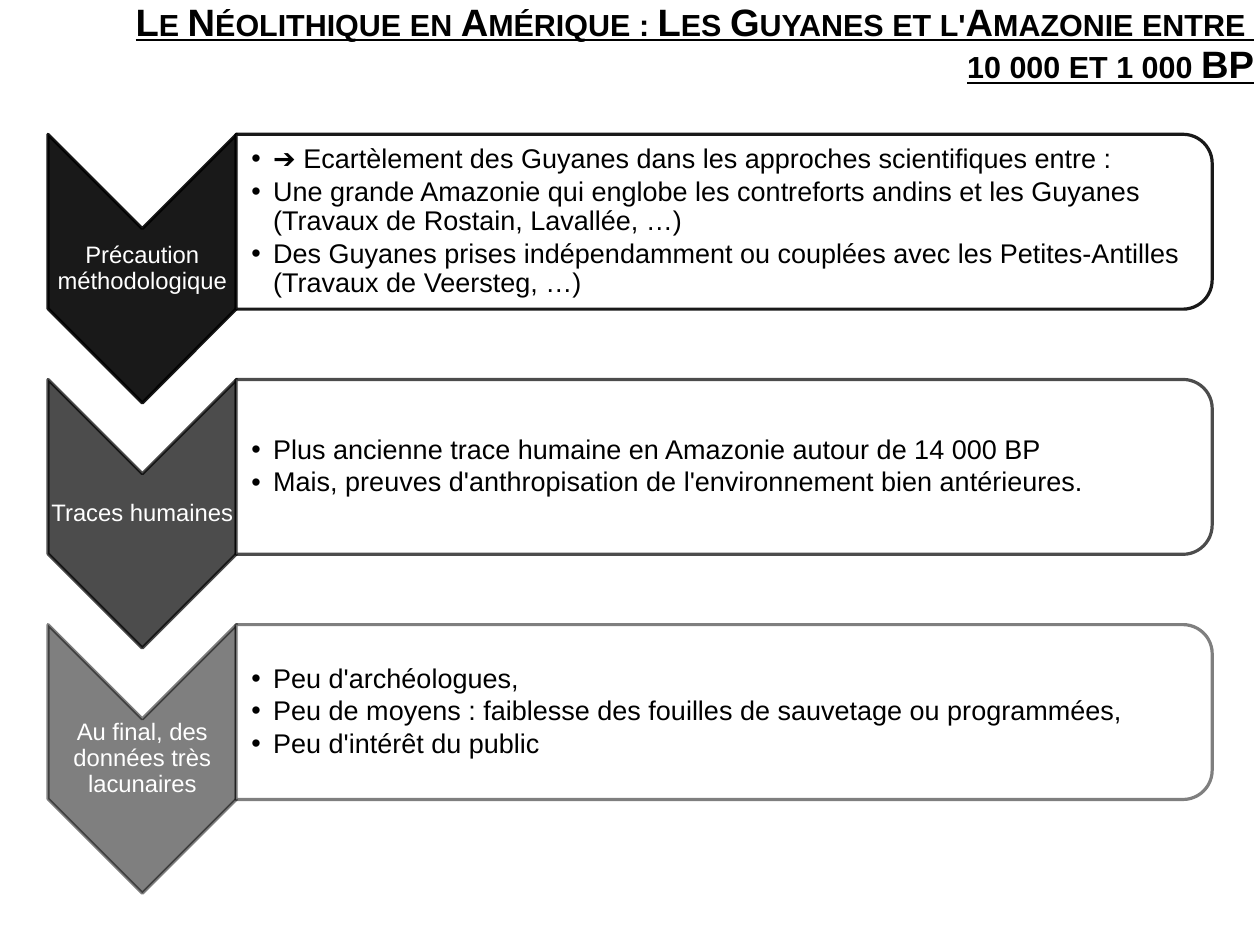
from lxml import etree
from pptx import Presentation
from pptx.dml.color import RGBColor
from pptx.enum.shapes import MSO_SHAPE
from pptx.enum.text import MSO_ANCHOR, PP_ALIGN
from pptx.oxml.ns import qn
from pptx.util import Inches, Pt

CHEVRON = MSO_SHAPE.CHEVRON
ROUNDED_PANEL = MSO_SHAPE.ROUND_2_SAME_RECTANGLE
TOP, MIDDLE = MSO_ANCHOR.TOP, MSO_ANCHOR.MIDDLE
LEFT, CENTER, RIGHT = PP_ALIGN.LEFT, PP_ALIGN.CENTER, PP_ALIGN.RIGHT

COLORS = {"black": "000000", "white": "FFFFFF"}
FONT = "Arial"

TITLE = [
    "Le Néolithique en Amérique : Les Guyanes et l'Amazonie entre ",
    "10 000 et 1 000 BP",
]
STEPS = [
    ("Précaution méthodologique", 90, [
        "➔ Ecartèlement des Guyanes dans les approches scientifiques entre :",
        "Une grande Amazonie qui englobe les contreforts andins et les Guyanes "
        "(Travaux de Rostain, Lavallée, …)",
        "Des Guyanes prises indépendamment ou couplées avec les Petites-Antilles "
        "(Travaux de Veersteg, …)",
    ]),
    ("Traces humaines", 70, [
        "Plus ancienne trace humaine en Amazonie autour de 14 000 BP",
        "Mais, preuves d'anthropisation de l'environnement bien antérieures.",
    ]),
    ("Au final, des données très lacunaires", 50, [
        "Peu d'archéologues,",
        "Peu de moyens : faiblesse des fouilles de sauvetage ou programmées,",
        "Peu d'intérêt du public",
    ]),
]

CM_PER_INCH = 2.54
SLIDE_WIDTH, SLIDE_HEIGHT = 28 / CM_PER_INCH, 21 / CM_PER_INCH
TITLE_BOX = (0.39, 0.02, 10.58, 0.92)
STEP_PITCH = 2.145
CHEVRON_X, CHEVRON_Y = 1.245, 2.35
PANEL_X, PANEL_Y = 6.335, 1.94
DETAIL_X = 6.305


def centered(x, y, width, height):
    return x - width / 2, y - height / 2, width, height


def paint(color_format, color, opacity):
    color_format.rgb = RGBColor.from_string(COLORS[color])
    srgb = color_format._xFill.find(qn("a:srgbClr"))
    etree.SubElement(srgb, qn("a:alpha"), val=str(opacity * 1000))


def add_turned_shape(slide, preset, box, fill, fill_opacity, line_opacity):
    shape = slide.shapes.add_shape(preset, *map(Inches, box))
    shape.rotation = 90
    shape.shadow.inherit = False
    shape.fill.solid()
    paint(shape.fill.fore_color, fill, fill_opacity)
    shape.line.width = Pt(2)
    paint(shape.line.color, "black", line_opacity)


def add_bullet(paragraph):
    properties = paragraph._p.get_or_add_pPr()
    properties.set("marL", str(Inches(0.19)))
    properties.set("indent", str(-Inches(0.19)))
    color = etree.SubElement(properties, qn("a:buClr"))
    etree.SubElement(color, qn("a:srgbClr"), val=COLORS["black"])
    etree.SubElement(properties, qn("a:buFont"), typeface=FONT)
    etree.SubElement(properties, qn("a:buChar"), char="•")


def add_text(slide, box, lines, size, color, align, anchor, insets, spacing,
             gap=0, bullets=False, heading=False):
    frame = slide.shapes.add_textbox(*map(Inches, box)).text_frame
    frame.word_wrap = True
    frame.vertical_anchor = anchor
    (frame.margin_left, frame.margin_top,
     frame.margin_right, frame.margin_bottom) = map(Inches, insets)
    for index, line in enumerate(lines):
        paragraph = frame.add_paragraph() if index else frame.paragraphs[0]
        paragraph.alignment = align
        paragraph.line_spacing = spacing
        paragraph.space_after = Pt(gap)
        if bullets:
            add_bullet(paragraph)
        run = paragraph.add_run()
        run.text = line
        run.font.name = FONT
        run.font.size = Pt(size)
        run.font.color.rgb = RGBColor.from_string(COLORS[color])
        if heading:
            run.font.bold = True
            run.font.underline = True
            run.font._element.set("cap", "small")


def main():
    deck = Presentation()
    deck.slide_width = Inches(SLIDE_WIDTH)
    deck.slide_height = Inches(SLIDE_HEIGHT)
    slide = deck.slides.add_slide(deck.slide_layouts[6])

    add_text(slide, TITLE_BOX, TITLE, 24, "black", RIGHT, TOP,
             (0, 0, 0, 0), 0.93, heading=True)

    for index, (label, opacity, details) in enumerate(STEPS):
        offset = index * STEP_PITCH
        chevron_y, panel_y = CHEVRON_Y + offset, PANEL_Y + offset
        add_turned_shape(slide, CHEVRON,
                         centered(CHEVRON_X, chevron_y, 2.35, 1.65),
                         "black", opacity, opacity)
        add_text(slide, centered(CHEVRON_X, chevron_y, 1.65, 0.71), [label],
                 15, "white", CENTER, MIDDLE, (0.01,) * 4, 0.9)
        add_turned_shape(slide, ROUNDED_PANEL,
                         centered(PANEL_X, panel_y, 1.53, 8.54),
                         "white", 90, opacity)
        add_text(slide, centered(DETAIL_X, panel_y, 8.47, 1.38), details,
                 17, "black", LEFT, MIDDLE, (0.13, 0.01, 0.01, 0.01), 0.9,
                 gap=2.2, bullets=True)

    deck.save("out.pptx")


if __name__ == "__main__":
    main()
